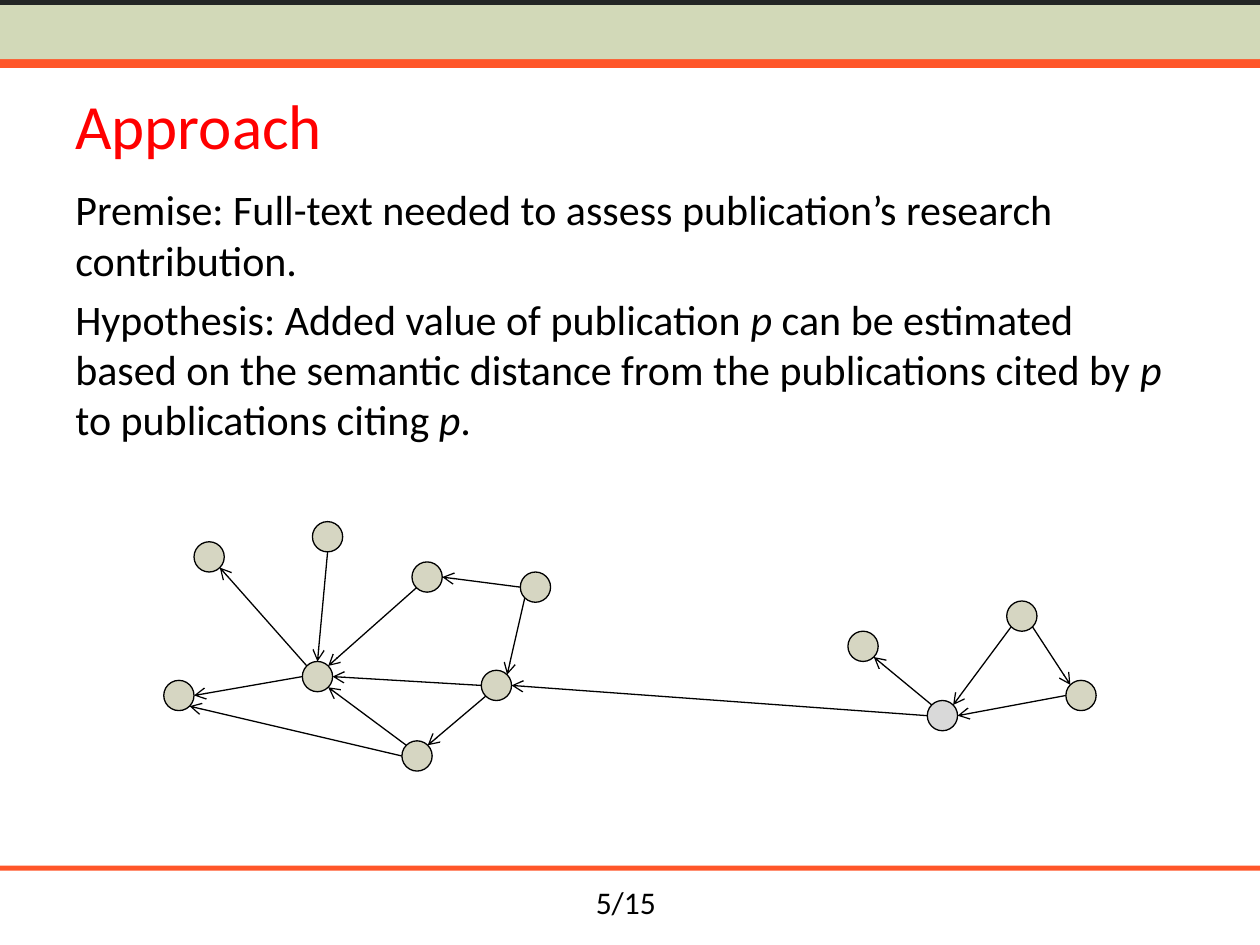
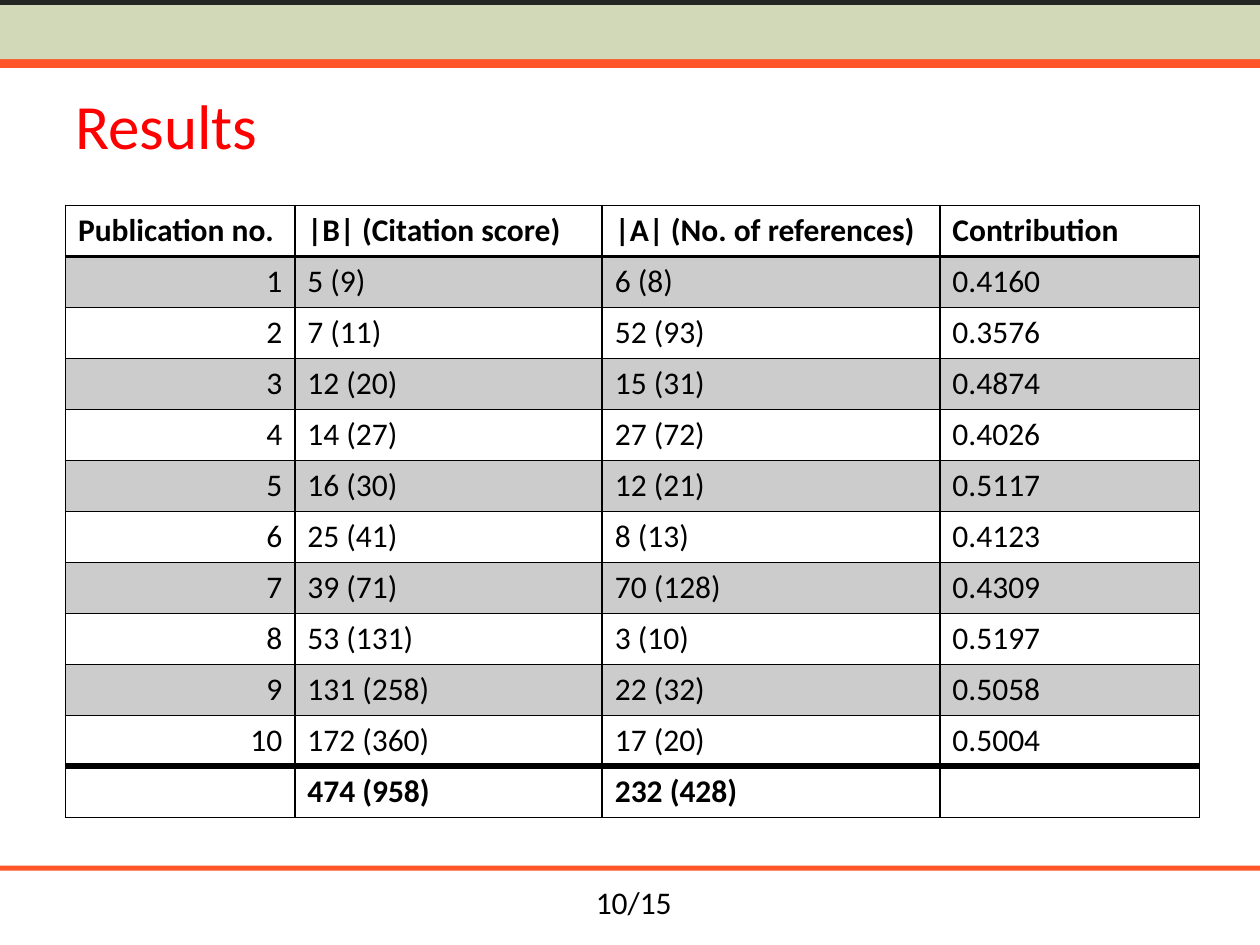
"""Build two slides on estimating the research contribution of publications."""
from math import cos, radians, sin

from lxml.etree import SubElement
from pptx import Presentation
from pptx.dml.color import RGBColor
from pptx.enum.shapes import MSO_CONNECTOR, MSO_SHAPE
from pptx.enum.text import MSO_ANCHOR, PP_ALIGN
from pptx.oxml.ns import qn
from pptx.util import Inches, Pt

COLORS = {
    "orange": "FF5629",
    "dark": "232625",
    "sage": "D2D9B8",
    "title": "FF0000",
    "text": "000000",
    "node": "D6D6C2",
    "focus": "D9D9D9",
    "stripe": "CCCCCC",
}
FONT = "Calibri"
SLIDE_TOTAL = 15
BANDS = [
    (0, 0.46, 10.02, 0.08, "orange"),
    (-0.01, -0.03, 10.03, 0.08, "dark"),
    (-0.01, 0.04, 10.01, 0.43, "sage"),
    (-0.01, 6.87, 10.02, 0.04, "orange"),
]

NODE_SIZE = 0.24
NODES = {
    "far left top": (1.54, 4.3),
    "far left": (1.3, 5.4),
    "top": (2.48, 4.14),
    "upper": (3.27, 4.46),
    "upper right": (4.13, 4.54),
    "hub": (2.4, 5.25),
    "bridge": (3.82, 5.32),
    "bottom": (3.19, 5.88),
    "focus": (7.36, 5.56),
    "right inner": (6.73, 5.01),
    "right top": (7.99, 4.77),
    "far right": (8.46, 5.4),
}
SIDE_ANGLES = {"E": 0, "SE": 45, "S": 90, "SW": 135, "W": 180, "NW": 225, "N": 270, "NE": 315}
CITATIONS = [
    ("hub", "NW", "far left top", "SE"),
    ("hub", "W", "far left", "E"),
    ("top", "S", "hub", "N"),
    ("upper", "SW", "hub", "NE"),
    ("bridge", "W", "hub", "E"),
    ("bottom", "NW", "hub", "SE"),
    ("upper right", "W", "upper", "E"),
    ("upper right", "SW", "bridge", "NE"),
    ("focus", "W", "bridge", "E"),
    ("far right", "W", "focus", "E"),
    ("focus", "NW", "right inner", "SE"),
    ("bridge", "SW", "bottom", "NE"),
    ("right top", "SW", "focus", "NE"),
    ("bottom", "W", "far left", "SE"),
    ("right top", "SE", "far right", "NW"),
]

APPROACH = [
    "Premise: Full-text needed to assess publication’s research contribution.",
    "Hypothesis: Added value of publication *p* can be estimated based on the semantic "
    "distance from the publications cited by *p* to publications citing *p*.",
]
COLUMN_WIDTHS = [1.82, 2.44, 2.68, 2.06]
RESULTS = [
    ("Publication no.", "|B| (Citation score)", "|A| (No. of references)", "Contribution"),
    ("1", "5 (9)", "6 (8)", "0.4160"),
    ("2", "7 (11)", "52 (93)", "0.3576"),
    ("3", "12 (20)", "15 (31)", "0.4874"),
    ("4", "14 (27)", "27 (72)", "0.4026"),
    ("5", "16 (30)", "12 (21)", "0.5117"),
    ("6", "25 (41)", "8 (13)", "0.4123"),
    ("7", "39 (71)", "70 (128)", "0.4309"),
    ("8", "53 (131)", "3 (10)", "0.5197"),
    ("9", "131 (258)", "22 (32)", "0.5058"),
    ("10", "172 (360)", "17 (20)", "0.5004"),
    ("", "474 (958)", "232 (428)", ""),
]


def color(name):
    return RGBColor.from_string(COLORS[name])


def format_text(paragraph, text, size=18, ink="text", bold=False, align=PP_ALIGN.LEFT, before=0):
    paragraph.alignment = align
    paragraph.space_before = Pt(before)
    for index, part in enumerate(text.split("*")):
        if part:
            run = paragraph.add_run()
            run.text = part
            run.font.name = FONT
            run.font.size = Pt(size)
            run.font.bold = bold
            run.font.italic = index % 2 == 1
            run.font.color.rgb = color(ink)


def set_border(cell, side, width):
    line = SubElement(cell._tc.get_or_add_tcPr(), qn(f"a:ln{side}"), w=str(Pt(width)))
    fill = SubElement(line, qn("a:solidFill"))
    SubElement(fill, qn("a:srgbClr"), val=COLORS["text"])


def node_point(node, side):
    left, top = NODES[node]
    radius = NODE_SIZE / 2
    angle = radians(SIDE_ANGLES[side])
    return (Inches(left + radius + radius * cos(angle)),
            Inches(top + radius + radius * sin(angle)))


class Deck:
    def __init__(self):
        self.presentation = Presentation()
        self.presentation.slide_width = Inches(10)
        self.presentation.slide_height = Inches(7.5)
        self.slide = None

    def add_slide(self, title, number):
        self.slide = self.presentation.slides.add_slide(self.presentation.slide_layouts[6])
        for left, top, width, height, fill in BANDS:
            self.add_shape(MSO_SHAPE.RECTANGLE, left, top, width, height, fill)
        self.add_text([f"{number}/{SLIDE_TOTAL}"], 4.63, 6.96, 1.45, 0.4)
        self.add_text([title], 0.5, 0.47, 9, 1.04, anchor=MSO_ANCHOR.MIDDLE, size=36, ink="title")

    def add_shape(self, kind, left, top, width, height, fill, outline=None):
        shape = self.slide.shapes.add_shape(
            kind, Inches(left), Inches(top), Inches(width), Inches(height))
        shape.shadow.inherit = False
        shape.fill.solid()
        shape.fill.fore_color.rgb = color(fill)
        if outline:
            shape.line.color.rgb = color(outline)
            shape.line.width = Pt(0.75)
        else:
            shape.line.fill.background()

    def add_text(self, texts, left, top, width, height, anchor=MSO_ANCHOR.TOP,
                 right_inset=0.1, **style):
        box = self.slide.shapes.add_textbox(
            Inches(left), Inches(top), Inches(width), Inches(height))
        frame = box.text_frame
        frame.word_wrap = True
        frame.margin_right = Inches(right_inset)
        frame.vertical_anchor = anchor
        for index, text in enumerate(texts):
            paragraph = frame.add_paragraph() if index else frame.paragraphs[0]
            format_text(paragraph, text, **style)

    def add_arrow(self, start, end):
        connector = self.slide.shapes.add_connector(MSO_CONNECTOR.STRAIGHT, *start, *end)
        connector.line.color.rgb = color("text")
        connector.line.width = Pt(0.75)
        SubElement(connector.line._get_or_add_ln(), qn("a:tailEnd"), type="arrow")
        SubElement(connector._element.spPr, qn("a:effectLst"))

    def add_table(self, rows, widths, left, top, height):
        table = self.slide.shapes.add_table(
            len(rows), len(widths), Inches(left), Inches(top),
            Inches(sum(widths)), Inches(height)).table
        table.first_row = table.horz_banding = False
        for column, width in zip(table.columns, widths):
            column.width = Inches(width)
        last = len(rows) - 1
        rule_widths = {1: 2, last: 4}
        for row, values in enumerate(rows):
            for column, value in enumerate(values):
                cell = table.cell(row, column)
                is_data = 0 < row < last
                format_text(cell.text_frame.paragraphs[0], value, bold=not is_data,
                            align=PP_ALIGN.RIGHT if is_data and column == 0 else PP_ALIGN.LEFT)
                for side, width in (("L", 1), ("R", 1), ("T", rule_widths.get(row, 1)),
                                    ("B", rule_widths.get(row + 1, 1))):
                    set_border(cell, side, width)
                if is_data and row % 2:
                    cell.fill.solid()
                    cell.fill.fore_color.rgb = color("stripe")
                else:
                    cell.fill.background()


def main():
    deck = Deck()

    deck.add_slide("Approach", 5)
    deck.add_text(APPROACH, 0.5, 1.41, 9, 5.21, right_inset=0.15, size=24, before=4.8)
    for citation in CITATIONS:
        deck.add_arrow(node_point(*citation[:2]), node_point(*citation[2:]))
    for name, (left, top) in NODES.items():
        fill = "focus" if name == "focus" else "node"
        deck.add_shape(MSO_SHAPE.OVAL, left, top, NODE_SIZE, NODE_SIZE, fill, outline="text")

    deck.add_slide("Results", 10)
    deck.add_table(RESULTS, COLUMN_WIDTHS, 0.52, 1.63, 4.86)

    deck.presentation.save("out.pptx")


if __name__ == "__main__":
    main()
